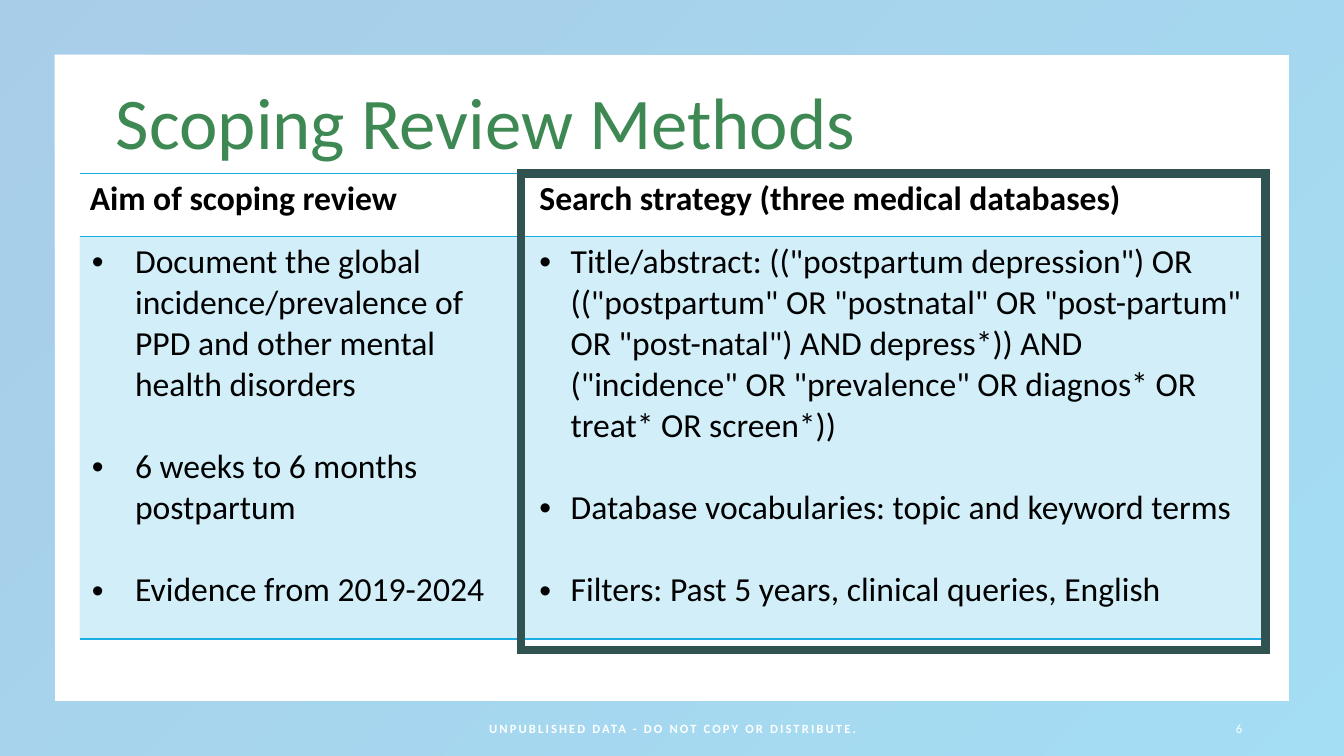
from dataclasses import dataclass

from lxml import etree
from pptx import Presentation
from pptx.dml.color import RGBColor
from pptx.enum.shapes import MSO_SHAPE
from pptx.enum.text import MSO_ANCHOR, MSO_AUTO_SIZE, PP_ALIGN
from pptx.oxml.ns import qn
from pptx.util import Inches, Pt

FRAME, RECTANGLE = MSO_SHAPE.FRAME, MSO_SHAPE.RECTANGLE
TOP, MIDDLE = MSO_ANCHOR.TOP, MSO_ANCHOR.MIDDLE
LEFT, CENTER, RIGHT = PP_ALIGN.LEFT, PP_ALIGN.CENTER, PP_ALIGN.RIGHT
NO_AUTOFIT = MSO_AUTO_SIZE.NONE

FONT = "Calibri"
COLORS = {"blue": "2683C6", "cyan": "1CADE4", "green": "3E8853",
          "teal": "305250", "black": "000000", "white": "FFFFFF"}
TABLE_TOP, HEADER_HEIGHT, BODY_HEIGHT = 1.72, 0.63, 3.99


@dataclass
class Column:
    """A table column with its heading and bullet items."""
    width: float
    heading: str
    indent: float
    hanging: float
    items: list[str]


@dataclass
class Footer:
    """A small text at the foot of the slide."""
    text: str
    left: float
    width: float
    align: PP_ALIGN
    bold: bool


COLUMNS = [
    Column(4.46, "Aim of scoping review", 0.45, 0.43, [
        "Document the global incidence/prevalence of PPD and other mental health disorders",
        "6 weeks to 6 months postpartum",
        "Evidence from 2019-2024"]),
    Column(7.3, "Search strategy (three medical databases)", 0.31, 0.31, [
        'Title/abstract: (("postpartum depression") OR (("postpartum" OR "postnatal" OR '
        '"post-partum" OR "post-natal") AND depress*)) AND ("incidence" OR "prevalence" OR '
        'diagnos* OR treat* OR screen*))',
        "Database vocabularies: topic and keyword terms",
        "Filters: Past 5 years, clinical queries, English"]),
]
FOOTERS = [
    Footer("UNPUBLISHED DATA - DO NOT COPY OR DISTRIBUTE.", 4.42, 4.5, CENTER, True),
    Footer("6", 9.42, 3, RIGHT, False),
]


def rgb(name: str) -> RGBColor:
    """Return a named colour."""
    return RGBColor.from_string(COLORS[name])


def add_run(p, text: str, size: float, color: str, bold: bool = False):
    """Add a formatted run to a paragraph."""
    r = p.add_run()
    r.text = text
    r.font.name, r.font.size, r.font.bold = FONT, Pt(size), bold
    r.font.color.rgb = rgb(color)
    return r


def set_alpha(element, percent: int) -> None:
    """Make every colour inside an element partly transparent."""
    for clr in element.iter(qn("a:srgbClr")):
        etree.SubElement(clr, qn("a:alpha")).set("val", str(percent * 1000))


def add_frame(s, prs) -> None:
    """Draw the gradient frame behind everything else."""
    sp = s.shapes.add_shape(FRAME, 0, 0, prs.slide_width, prs.slide_height)
    sp.shadow.inherit = False
    sp.adjustments[0] = 0.072
    sp.line.fill.background()
    sp.fill.gradient()
    sp.fill.gradient_angle = 315
    for stop, position, color in zip(sp.fill.gradient_stops, (0, 1), ("blue", "cyan")):
        stop.position = position
        stop.color.rgb = rgb(color)
    set_alpha(sp.element.spPr, 40)
    sp.element.getparent().insert(2, sp.element)


def add_title(s) -> None:
    """Place and format the slide title."""
    sp = s.shapes.title
    sp.left, sp.top, sp.width, sp.height = map(Inches, (1.05, 0.81, 9.05, 3.09))
    tf = sp.text_frame
    tf.vertical_anchor, tf.auto_size, tf.word_wrap = TOP, NO_AUTOFIT, True
    p = tf.paragraphs[0]
    p.alignment, p.line_spacing = LEFT, 0.9
    add_run(p, "Scoping Review Methods", 52, "green")


def add_footer(s, footer: Footer) -> None:
    """Draw one letter-spaced footer text."""
    sp = s.shapes.add_textbox(Inches(footer.left), Inches(7.03),
                              Inches(footer.width), Inches(0.4))
    tf = sp.text_frame
    tf.word_wrap, tf.vertical_anchor = True, MIDDLE
    p = tf.paragraphs[0]
    p.alignment = footer.align
    r = add_run(p, footer.text, 9, "white", footer.bold)
    r.font._element.set("spc", "150")


def set_borders(cell, sides: str) -> None:
    """Rule the given sides of a cell and clear the others."""
    tcPr = cell._tc.get_or_add_tcPr()
    for side in "LRTB":
        ln = etree.SubElement(tcPr, qn(f"a:ln{side}"), w=str(Pt(1)))
        if side in sides:
            fill = etree.SubElement(ln, qn("a:solidFill"))
            etree.SubElement(fill, qn("a:srgbClr"), val=COLORS["cyan"])
        else:
            etree.SubElement(ln, qn("a:noFill"))


def add_bullet(p, column: Column) -> None:
    """Give a paragraph a hanging bullet."""
    pPr = p._p.get_or_add_pPr()
    pPr.set("marL", str(Inches(column.indent)))
    pPr.set("indent", str(-Inches(column.hanging)))
    etree.SubElement(pPr, qn("a:buFont"), typeface="Arial")
    etree.SubElement(pPr, qn("a:buChar"), char="•")


def add_methods_table(s) -> None:
    """Draw the table of aims and search strategy."""
    width = sum(column.width for column in COLUMNS)
    table = s.shapes.add_table(2, len(COLUMNS), Inches(0.79), Inches(TABLE_TOP), Inches(width),
                               Inches(HEADER_HEIGHT + BODY_HEIGHT)).table
    table.first_row = table.horz_banding = False
    table.rows[0].height, table.rows[1].height = Inches(HEADER_HEIGHT), Inches(BODY_HEIGHT)
    for i, column in enumerate(COLUMNS):
        table.columns[i].width = Inches(column.width)
        header, body = table.cell(0, i), table.cell(1, i)
        set_borders(header, "TB")
        header.fill.background()
        add_run(header.text_frame.paragraphs[0], column.heading, 24, "black", True)
        set_borders(body, "TB")
        body.fill.solid()
        body.fill.fore_color.rgb = rgb("cyan")
        set_alpha(body._tc.tcPr.find(qn("a:solidFill")), 20)
        tf = body.text_frame
        for j, item in enumerate(column.items):
            p = tf.add_paragraph() if j else tf.paragraphs[0]
            if j:
                p.space_before = Pt(29.3)
            add_bullet(p, column)
            add_run(p, item, 24, "black")


def add_highlight(s) -> None:
    """Outline the search strategy column with square corners."""
    sp = s.shapes.add_shape(RECTANGLE, Inches(5.17), Inches(TABLE_TOP),
                            Inches(7.38), Inches(4.73))
    sp.shadow.inherit = False
    sp.fill.background()
    sp.line.color.rgb = rgb("teal")
    sp.line.width = Pt(6)
    etree.SubElement(sp.element.spPr.find(qn("a:ln")), qn("a:miter"), lim="800000")


def main() -> None:
    """Build and save the slide."""
    prs = Presentation()
    prs.slide_width, prs.slide_height = Inches(13.33), Inches(7.5)
    s = prs.slides.add_slide(prs.slide_layouts[5])
    add_frame(s, prs)
    add_title(s)
    for footer in FOOTERS:
        add_footer(s, footer)
    add_methods_table(s)
    add_highlight(s)
    prs.save("out.pptx")


if __name__ == "__main__":
    main()
